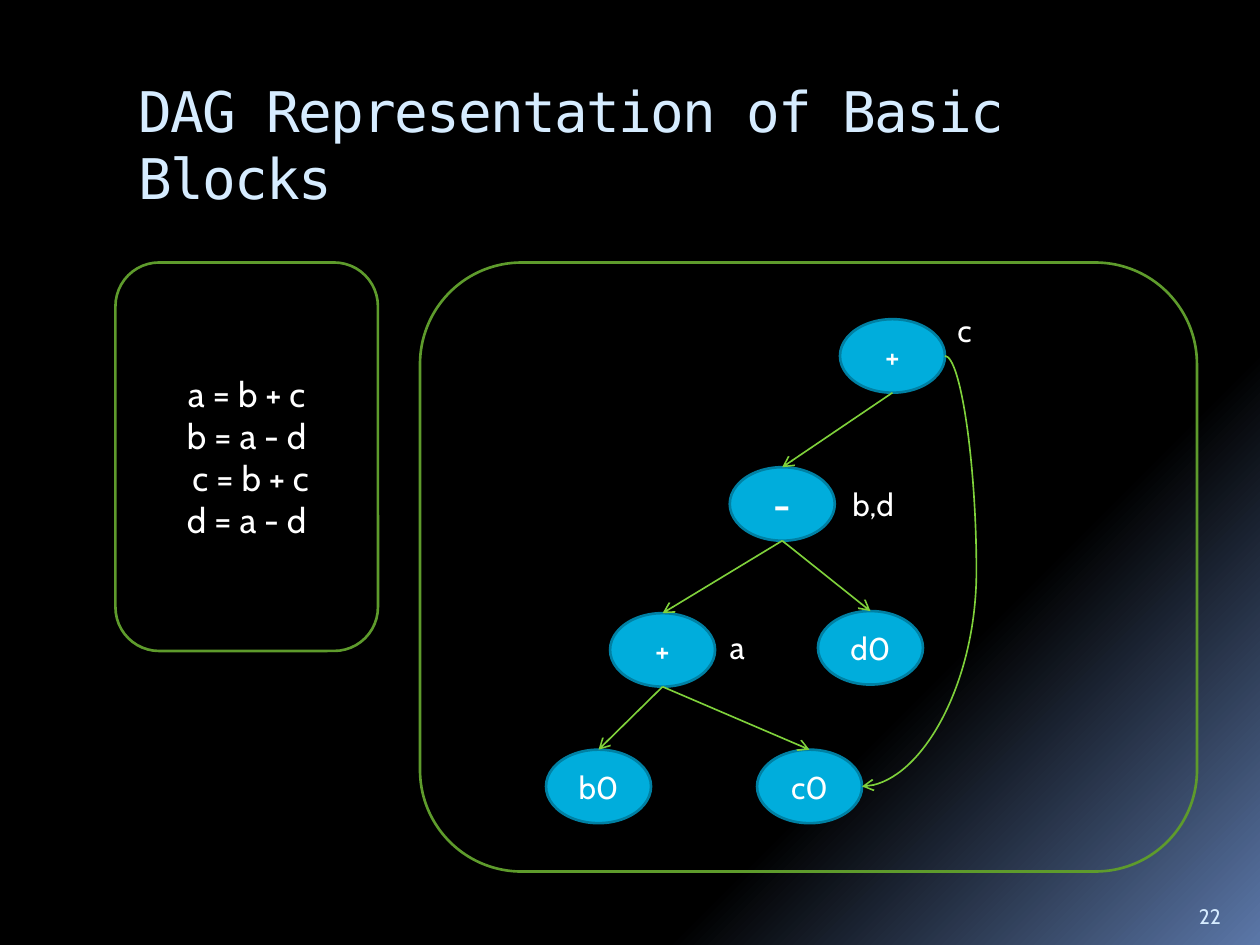
from lxml import etree
from pptx import Presentation, util as u
from pptx.dml.color import RGBColor
from pptx.enum import shapes, text
from pptx.oxml.ns import qn

COLORS = {"black": "000000", "glow": "5B77A8", "pale": "D6ECFF", "white": "FFFFFF",
          "frame": "5E9B2C", "node": "00ADDC", "rim": "0080A3", "edge": "7FD13B"}
COLUMNS, ROWS = 120, 90
NODE_WIDTH, NODE_HEIGHT = 10, 7


class DagSlide:
    body_font = "Cabin"
    title_font = "DejaVu Sans Mono"

    def __init__(self, deck):
        self.column = deck.slide_width / COLUMNS
        self.row = deck.slide_height / ROWS
        self.slide = deck.slides.add_slide(deck.slide_layouts[5])

    def color(self, name):
        return RGBColor.from_string(COLORS[name])

    def place(self, left, top, width, height):
        return (round(left * self.column), round(top * self.row),
                round(width * self.column), round(height * self.row))

    def background(self, *stops, angle):
        fill = self.slide.background.fill
        fill.gradient()
        fill.gradient_angle = angle
        for stop, (position, name) in zip(fill.gradient_stops, stops):
            stop.position = position
            stop.color.rgb = self.color(name)

    def set_text(self, frame, lines, frame_format, align=text.PP_ALIGN.LEFT,
                 color="white", **font_format):
        for key, value in frame_format.items():
            setattr(frame, key, value)
        for index, line in enumerate(lines):
            paragraph = frame.paragraphs[0] if index == 0 else frame.add_paragraph()
            paragraph.alignment = align
            run = paragraph.add_run()
            run.text = line
            for key, value in {"name": self.body_font, **font_format}.items():
                setattr(run.font, key, value)
            run.font.color.rgb = self.color(color)

    def title(self, heading, *box):
        holder = self.slide.shapes.title
        for key, value in zip(("left", "top", "width", "height"), self.place(*box)):
            setattr(holder, key, value)
        self.set_text(holder.text_frame, [heading],
                      {"word_wrap": True, "vertical_anchor": text.MSO_ANCHOR.TOP,
                       "auto_size": text.MSO_AUTO_SIZE.NONE},
                      color="pale", name=self.title_font, size=u.Pt(32))
        for run in holder.text_frame.paragraphs[0].runs:
            run._r.get_or_add_rPr().set("spc", "-100")

    def label(self, words, *box, color="white", size=18, **frame_format):
        note = self.slide.shapes.add_textbox(*self.place(*box))
        self.set_text(note.text_frame, [words], frame_format, color=color, size=u.Pt(size))

    def outline(self, kind, box, line, fill=None, lines=(), **font_format):
        shape = self.slide.shapes.add_shape(kind, *self.place(*box))
        shape.shadow.inherit = False
        if fill:
            shape.fill.solid()
            shape.fill.fore_color.rgb = self.color(fill)
        else:
            shape.fill.background()
        shape.line.color.rgb = self.color(line)
        shape.line.width = u.Pt(1.5)
        self.set_text(shape.text_frame, lines, {"vertical_anchor": text.MSO_ANCHOR.MIDDLE},
                      text.PP_ALIGN.CENTER, **font_format)
        return shape

    def panel(self, *box, lines=()):
        self.outline(shapes.MSO_SHAPE.ROUNDED_RECTANGLE, box, "frame",
                     lines=lines, size=u.Pt(20))

    def node(self, symbol, left, top, size=18, bold=False):
        return self.outline(shapes.MSO_SHAPE.OVAL, (left, top, NODE_WIDTH, NODE_HEIGHT),
                            "rim", "node", [symbol], size=u.Pt(size), bold=bold)

    def arrow(self, start, end, kind=shapes.MSO_CONNECTOR.STRAIGHT):
        edge = self.slide.shapes.add_connector(kind, *start, *end)
        edge.line.color.rgb = self.color("edge")
        edge.line.width = u.Pt(0.94)
        properties = edge._element.spPr
        etree.SubElement(properties.find(qn("a:ln")), qn("a:tailEnd"), type="arrow")
        etree.SubElement(properties, qn("a:effectLst"))
        return properties

    def branch(self, parent, child):
        self.arrow((parent.left + parent.width // 2, parent.top + parent.height),
                   (child.left + child.width // 2, child.top))

    def bypass(self, parent, child, bend):
        ends = [(node.left + node.width, node.top + node.height // 2)
                for node in (parent, child)]
        properties = self.arrow(*ends, kind=shapes.MSO_CONNECTOR.CURVE)
        geometry = properties.find(qn("a:prstGeom"))
        adjustments = geometry.find(qn("a:avLst"))
        if adjustments is None:
            adjustments = etree.SubElement(geometry, qn("a:avLst"))
        etree.SubElement(adjustments, qn("a:gd"), name="adj1",
                         fmla=f"val {round(bend * 100000)}")


def main():
    deck = Presentation()
    deck.slide_width, deck.slide_height = u.Inches(10), u.Inches(7.5)
    page = DagSlide(deck)
    page.background((0.73, "black"), (1, "glow"), angle=315)
    page.title("DAG Representation of Basic Blocks", 12, 6.7, 102, 12)
    page.label("22", 113, 84.2, 6, 4.8, color="pale", size=12,
               word_wrap=True, vertical_anchor=text.MSO_ANCHOR.BOTTOM)

    page.panel(11, 25, 25, 37, lines=["a = b + c", "b = a - d", " c = b + c", "d = a - d"])
    page.panel(40, 25, 74, 58)

    b0 = page.node("b0", 52, 71.4)
    c0 = page.node("c0", 72.1, 71.4)
    d0 = page.node("d0", 77.9, 58.2)
    first_sum = page.node("+", 58.1, 58.4)
    difference = page.node("-", 69.5, 44.5, size=24, bold=True)
    second_sum = page.node("+", 80, 30.4)

    for parent, child in ((first_sum, b0), (first_sum, c0), (difference, first_sum),
                          (difference, d0), (second_sum, difference)):
        page.branch(parent, child)
    page.bypass(second_sum, c0, bend=-0.38)

    for variables, left, top, width in (("a", 68.3, 59.2, 4), ("b,d", 80, 45.6, 6.5),
                                        ("c", 90, 29, 3.7)):
        page.label(variables, left, top, width, 4.8, word_wrap=False,
                   auto_size=text.MSO_AUTO_SIZE.SHAPE_TO_FIT_TEXT)
    deck.save("out.pptx")


if __name__ == "__main__":
    main()
